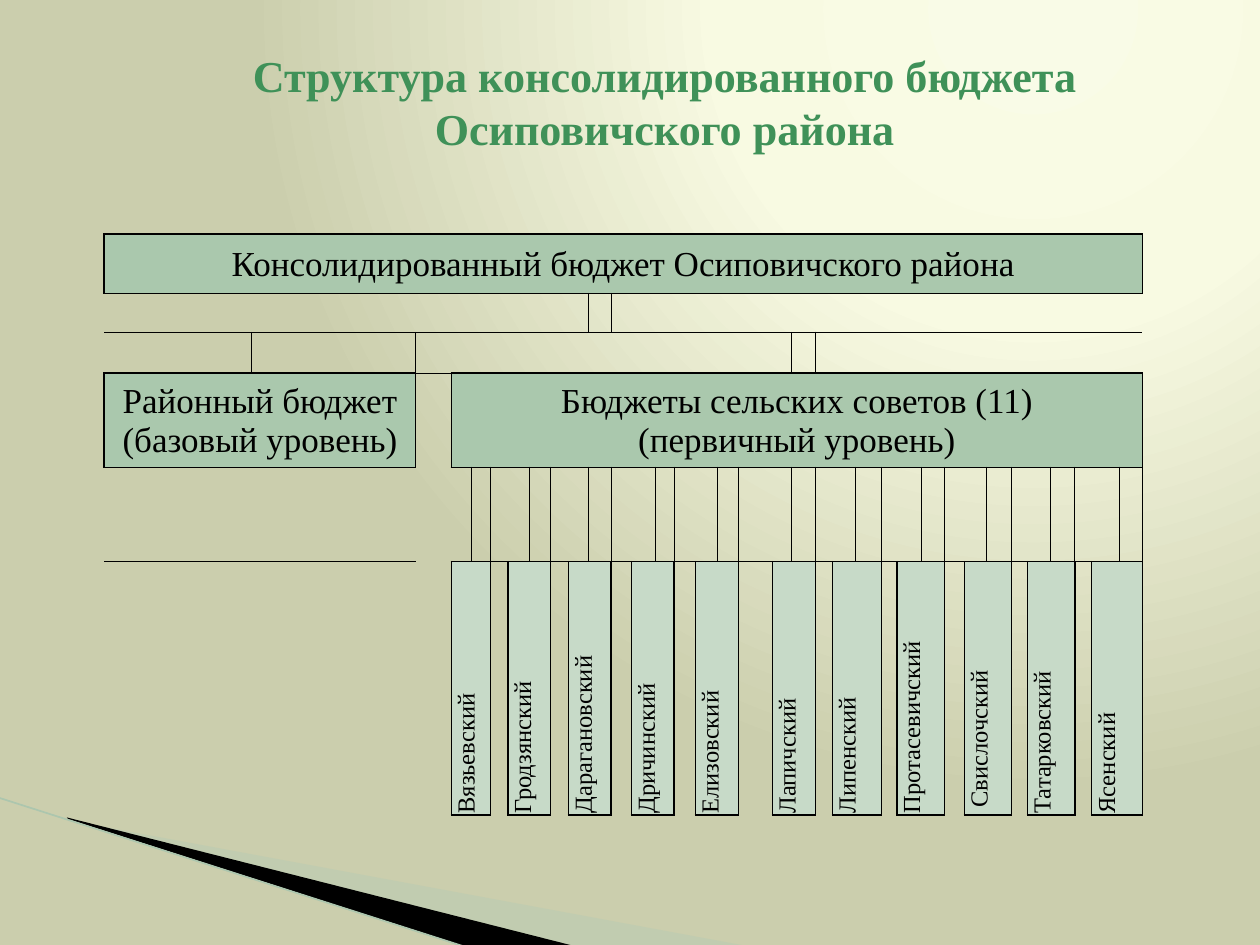
import pptx
import pptx.util
import pptx.dml.color
import pptx.enum.text
import pptx.enum.shapes
import pptx.oxml
import pptx.oxml.ns
import lxml.etree

Cm = pptx.util.Cm
Pt = pptx.util.Pt
RGBColor = pptx.dml.color.RGBColor
qn = pptx.oxml.ns.qn
ALIGN = pptx.enum.text.PP_ALIGN
MIDDLE = pptx.enum.text.MSO_ANCHOR.MIDDLE

BLACK = RGBColor(0x00, 0x00, 0x00)
GREEN = RGBColor(0x3F, 0x91, 0x58)
SAGE = RGBColor(0xAA, 0xC8, 0xAD)
PALE = RGBColor(0xC7, 0xDA, 0xC8)
MIST = RGBColor(0xB3, 0xCB, 0xB5)
MOSS = RGBColor(0xAC, 0xC6, 0xAE)
CREAM = RGBColor(0xF9, 0xFB, 0xE7)
IVORY = RGBColor(0xF8, 0xFA, 0xE2)
SAND = RGBColor(0xCB, 0xCE, 0xAD)

PLAIN = "{2D5ABB26-0587-4C30-8999-92F81FD0307C}"
SIDES = ("lnL", "lnR", "lnT", "lnB")
TWINS = {"lnL": (0, -1, "lnR"), "lnR": (0, 1, "lnL"),
         "lnT": (-1, 0, "lnB"), "lnB": (1, 0, "lnT")}

WIDTHS = [2.97, 3.31, 0.72, 0.41, 0.38, 0.35, 0.43, 0.43, 0.36, 0.4, 0.46, 0.41,
          0.48, 0.38, 0.43, 0.44, 0.43, 0.33, 0.35, 0.38, 0.49, 0.34, 0.46, 0.53,
          0.31, 0.49, 0.47, 0.4, 0.44, 0.51, 0.32, 0.46, 0.5, 0.34, 0.56, 0.46]
HEIGHTS = [1.2, 0.78, 0.82, 1.9, 1.9, 5.11]
TOWNS = ["Вязьевский", "Гродзянский", "Дарагановский", "Дричинский", "Елизовский",
         "Лапичский", "Липенский", "Протасевичский", " Свислочский",
         "Татарковский", "Ясенский"]


class Deck:
    def __init__(self, font):
        self.font = font
        self.prs = pptx.Presentation()
        self.prs.slide_width = Cm(25.4)
        self.prs.slide_height = Cm(19.05)
        self.slide = self.prs.slides.add_slide(self.prs.slide_layouts[6])

    def glow(self, stops, focus):
        self.slide.background.fill.gradient()
        old = self.slide.element.find(".//" + qn("a:gradFill"))
        marks = "".join(f'<a:gs pos="{pos * 1000}"><a:srgbClr val="{tint}"/></a:gs>'
                        for pos, tint in stops)
        rect = " ".join(f'{side}="{val * 1000}"' for side, val in zip("ltrb", focus))
        new = pptx.oxml.parse_xml(
            f'<a:gradFill {pptx.oxml.ns.nsdecls("a")} rotWithShape="1">'
            f'<a:gsLst>{marks}</a:gsLst><a:path path="circle">'
            f'<a:fillToRect {rect}/></a:path></a:gradFill>')
        old.getparent().replace(old, new)

    def wedge(self, points, tint, alpha=100):
        spots = [(Cm(x), Cm(y)) for x, y in points]
        form = self.slide.shapes.build_freeform(*spots[0], scale=1.0)
        form.add_line_segments(spots[1:], close=True)
        shape = form.convert_to_shape()
        shape.shadow.inherit = False
        shape.line.fill.background()
        shape.fill.solid()
        shape.fill.fore_color.rgb = tint
        if alpha < 100:
            color = shape.element.spPr.find(".//" + qn("a:srgbClr"))
            lxml.etree.SubElement(color, qn("a:alpha")).set("val", str(alpha * 1000))

    def line(self, start, end, tint, width):
        kind = pptx.enum.shapes.MSO_CONNECTOR.STRAIGHT
        wire = self.slide.shapes.add_connector(
            kind, *(Cm(v) for v in (*start, *end)))
        wire.line.color.rgb = tint
        wire.line.width = Pt(width)
        lxml.etree.SubElement(wire.element.spPr, qn("a:effectLst"))

    def text(self, frame, lines, size, tint, align, bold=False):
        for i, words in enumerate(lines):
            para = frame.add_paragraph() if i else frame.paragraphs[0]
            para.alignment = align
            run = para.add_run()
            run.text = words
            run.font.name = self.font
            run.font.size = Pt(size)
            run.font.bold = bold
            run.font.color.rgb = tint

    def title(self, words, left, top, width, height):
        box = self.slide.shapes.add_textbox(Cm(left), Cm(top), Cm(width), Cm(height))
        frame = box.text_frame
        frame.word_wrap = True
        frame.vertical_anchor = MIDDLE
        self.text(frame, [words], 25.2, GREEN, ALIGN.CENTER, True)

    def grid(self, left, top, widths, heights):
        frame = self.slide.shapes.add_table(
            len(heights), len(widths), Cm(left), Cm(top),
            Cm(sum(widths)), Cm(sum(heights)))
        self.table = frame.table
        self.table.first_row = False
        self.table.horz_banding = False
        self.table._tbl.tblPr.find(qn("a:tableStyleId")).text = PLAIN
        for col, width in zip(self.table.columns, widths):
            col.width = Cm(width)
        for row, height in zip(self.table.rows, heights):
            row.height = Cm(height)
        for cell in self.table.iter_cells():
            cell.fill.background()
            cell.margin_left = cell.margin_right = cell.margin_top = Cm(0.03)
            cell.margin_bottom = Cm(0)
            cell.text_frame.paragraphs[0]._p.get_or_add_endParaRPr().set("sz", "800")
        self.edges = {}

    def edge(self, row, col, side, width=0.5):
        self.edges[row, col, side] = width
        down, over, twin = TWINS[side]
        self.edges[row + down, col + over, twin] = width

    def block(self, row, first, last, lines, size, tint, upright=False):
        cell = self.table.cell(row, first)
        cell.merge(self.table.cell(row, last))
        cell.fill.solid()
        cell.fill.fore_color.rgb = tint
        cell.vertical_anchor = MIDDLE
        if upright:
            cell._tc.get_or_add_tcPr().set("vert", "vert270")
        align = ALIGN.LEFT if upright else ALIGN.CENTER
        self.text(cell.text_frame, lines, size, BLACK, align)
        for col in range(first, last + 1):
            self.edge(row, col, "lnT", 1)
            self.edge(row, col, "lnB", 1)
        self.edge(row, first, "lnL", 1)
        self.edge(row, last, "lnR", 1)
        self.edges[row, first, "lnR"] = 1

    def rule(self):
        for r in range(len(self.table.rows)):
            for c in range(len(self.table.columns)):
                props = self.table.cell(r, c)._tc.get_or_add_tcPr()
                used = [s for s in SIDES if (r, c, s) in self.edges]
                for i, side in enumerate(used):
                    width = Pt(self.edges[r, c, side])
                    props.insert(i, pptx.oxml.parse_xml(
                        f'<a:{side} {pptx.oxml.ns.nsdecls("a")} w="{width}">'
                        f'<a:solidFill><a:srgbClr val="{BLACK}"/></a:solidFill>'
                        f'</a:{side}>'))


def main():
    deck = Deck("Times New Roman")
    deck.glow([(0, CREAM), (40, IVORY), (100, SAND)], (65, 0, 0, 98))
    deck.wedge([(1.4, 16.54), (15.11, 19.08), (11.58, 19.08), (1.4, 16.51)], MIST, 40)
    deck.wedge([(1.35, 16.48), (11.61, 19.08), (9.45, 19.1), (1.37, 16.51)], BLACK)
    deck.line((-0.03, 16.08), (9.42, 19.1), MOSS, 0.95)

    deck.grid(2.1, 4.72, WIDTHS, HEIGHTS)
    last = len(WIDTHS) - 1
    deck.block(0, 0, last, ["Консолидированный бюджет Осиповичского района"], 20, SAGE)
    deck.block(3, 0, 1, ["Районный бюджет", "(базовый уровень)"], 20, SAGE)
    deck.block(3, 3, last, ["Бюджеты сельских советов (11)", "(первичный уровень)"],
               20, SAGE)
    deck.edge(1, 9, "lnR")
    for col in range(1, 20):
        deck.edge(1, col, "lnB")
    for col in (0, 19):
        deck.edge(2, col, "lnR")
    for i, town in enumerate(TOWNS):
        col = 3 + 3 * i + (i > 4)
        deck.edge(4, col, "lnR")
        deck.block(5, col, col + 1, [town], 14, PALE, True)
    for row in (4, 5):
        deck.table.cell(row, 17).merge(deck.table.cell(row, 18))
    deck.edges[5, 17, "lnR"] = 1
    deck.rule()

    deck.title("Структура консолидированного бюджета Осиповичского района",
               3.1, 0.76, 20.6, 2.57)
    deck.prs.save("out.pptx")


if __name__ == "__main__":
    main()
